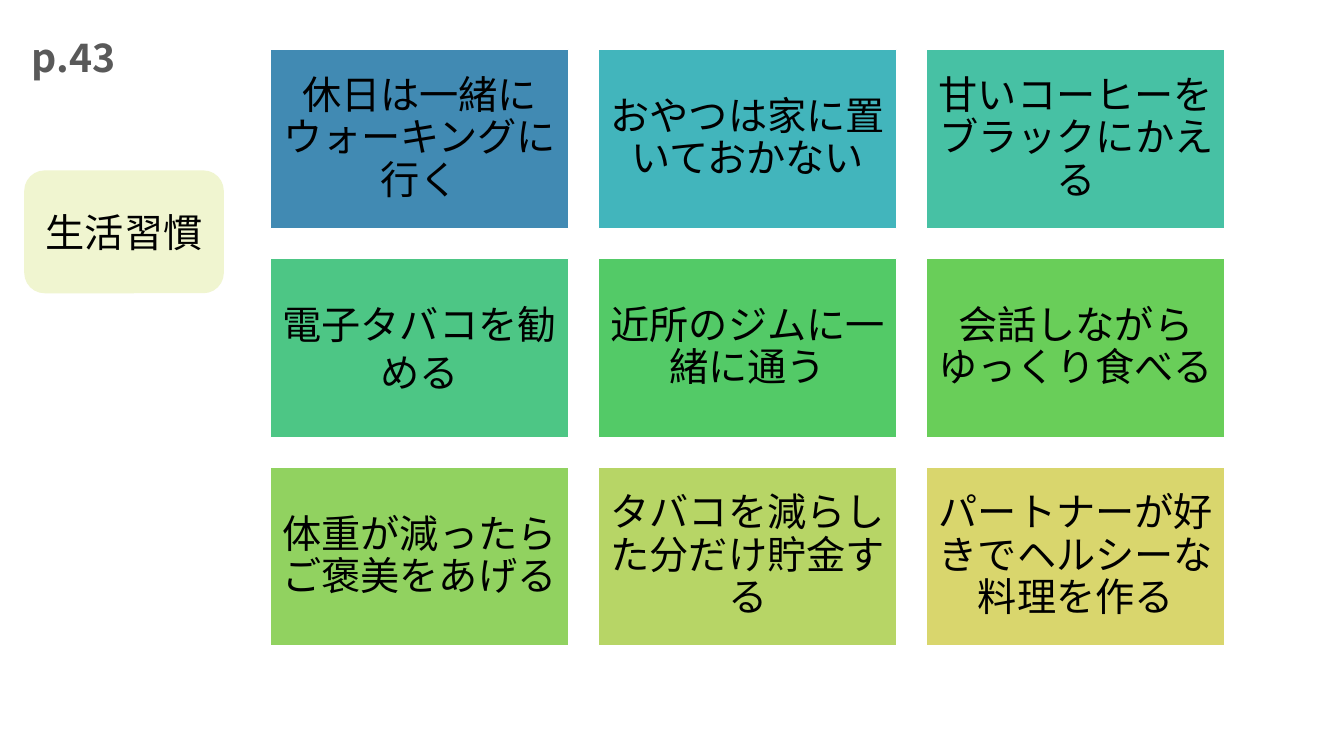
from dataclasses import dataclass

from lxml.etree import SubElement
from pptx import Presentation
from pptx.dml.color import RGBColor
from pptx.enum.shapes import MSO_SHAPE
from pptx.enum.text import MSO_ANCHOR, MSO_AUTO_SIZE, PP_ALIGN
from pptx.oxml.ns import qn
from pptx.util import Pt


@dataclass(frozen=True)
class Theme:
    face: str = "Noto Sans CJK JP"
    size: int = 28
    ink: str = "000000"
    grey: str = "595959"
    edge: str = "FFFFFF"
    label: str = "F0F5D0"


THEME = Theme()

COLS = 3
LEFT, TOP = 193, 35.4
WIDTH, HEIGHT = 213.2, 127.8
STEP_X, STEP_Y = 234.4, 149.1

HABITS = [
    ("休日は一緒にウォーキングに行く", "418AB3", 0.9),
    ("おやつは家に置いておかない", "42B5BC", 0.9),
    ("甘いコーヒーをブラックにかえる", "47C1A4", 0.9),
    ("電子タバコを勧める", "4DC685", 1.0),
    ("近所のジムに一緒に通う", "53CA67", 0.9),
    ("会話しながらゆっくり食べる", "69CE59", 0.9),
    ("体重が減ったらご褒美をあげる", "91D260", 0.9),
    ("タバコを減らした分だけ貯金する", "B7D566", 0.9),
    ("パートナーが好きでヘルシーな料理を作る", "D9D66D", 0.9),
]


def write(shape, text, color=THEME.ink, bold=False, space=1.0, inset=None):
    frame = shape.text_frame
    frame.word_wrap = True
    frame.auto_size = MSO_AUTO_SIZE.NONE
    frame.vertical_anchor = MSO_ANCHOR.MIDDLE
    if inset is not None:
        frame.margin_left = frame.margin_right = Pt(inset)
        frame.margin_top = frame.margin_bottom = Pt(inset)
    para = frame.paragraphs[0]
    para.alignment = PP_ALIGN.CENTER
    para.line_spacing = space
    para.space_before = Pt(0)
    run = para.add_run()
    run.text = text
    font = run.font
    font.size = Pt(THEME.size)
    font.bold = bold
    font.color.rgb = RGBColor.from_string(color)
    font.name = THEME.face
    # Japanese glyphs take the East Asian typeface
    SubElement(font._element, qn("a:ea"), typeface=THEME.face)


def add_box(slide, kind, box, fill, edge=None):
    shape = slide.shapes.add_shape(kind, *map(Pt, box))
    shape.shadow.inherit = False
    shape.fill.solid()
    shape.fill.fore_color.rgb = RGBColor.from_string(fill)
    if edge:
        shape.line.color.rgb = RGBColor.from_string(edge)
        shape.line.width = Pt(1)
    else:
        shape.line.fill.background()
    return shape


def add_grid(slide):
    for i, (text, fill, space) in enumerate(HABITS):
        row, col = divmod(i, COLS)
        box = LEFT + col * STEP_X, TOP + row * STEP_Y, WIDTH, HEIGHT
        card = add_box(slide, MSO_SHAPE.RECTANGLE, box, fill, THEME.edge)
        write(card, text, space=space, inset=8.4)


def set_title(slide, text):
    title = slide.shapes.title
    title.left, title.top = Pt(0), Pt(10)
    title.width, title.height = Pt(105), Pt(61)
    write(title, text, color=THEME.grey, bold=True)


def main():
    deck = Presentation()
    deck.slide_width, deck.slide_height = Pt(960), Pt(540)
    slide = deck.slides.add_slide(deck.slide_layouts[5])
    set_title(slide, "p.43")
    add_grid(slide)
    box = 17.3, 121.7, 142.6, 87.8
    label = add_box(slide, MSO_SHAPE.ROUNDED_RECTANGLE, box, THEME.label)
    write(label, "生活習慣")
    deck.save("out.pptx")


if __name__ == "__main__":
    main()
